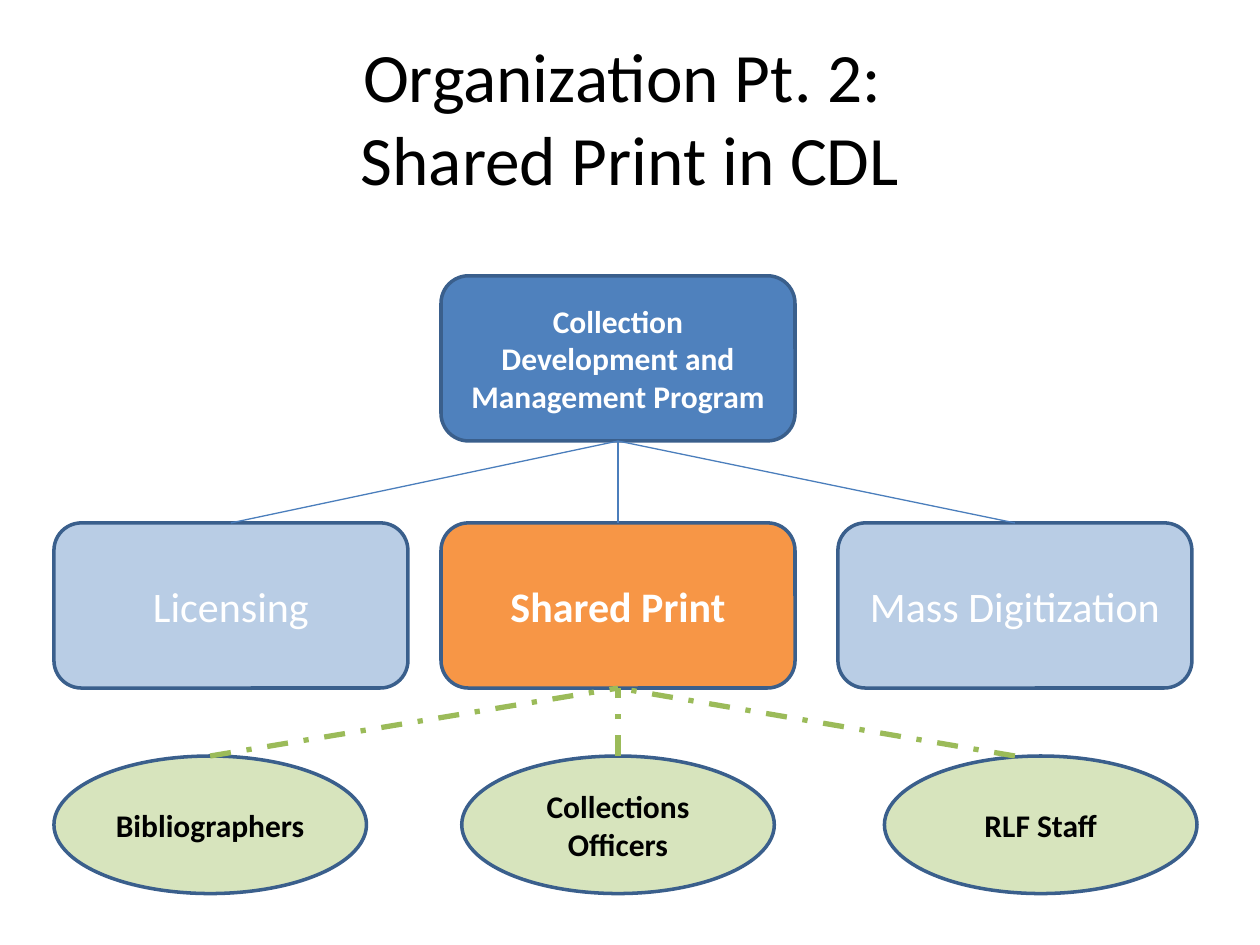
from lxml import etree
from pptx import Presentation
from pptx.dml.color import RGBColor
from pptx.enum import dml, shapes, text
from pptx.oxml.ns import qn
from pptx.util import Pt

BOX = shapes.MSO_SHAPE.ROUNDED_RECTANGLE
OVAL = shapes.MSO_SHAPE.OVAL
BOX_SIZE = (202.3, 94.4)
OVAL_SIZE = (178.6, 78.6)
PROGRAM_TOP, UNIT_TOP, PARTNER_TOP = 157.6, 298.8, 432


def color(hex_value):
    return RGBColor.from_string(hex_value)


class OrgChart:
    font = "Calibri"
    outline = "3A5F8C"

    def __init__(self, slide):
        self.slide = slide

    def add_run(self, paragraph, words, size, ink, bold=False):
        run = paragraph.add_run()
        run.text = words
        run.font.name = self.font
        run.font.size = Pt(size)
        run.font.bold = bold
        run.font.color.rgb = color(ink)

    def title(self, lines, left, top, width, height):
        heading = self.slide.shapes.title
        heading.left, heading.top = Pt(left), Pt(top)
        heading.width, heading.height = Pt(width), Pt(height)
        frame = heading.text_frame
        frame.vertical_anchor = text.MSO_ANCHOR.MIDDLE
        paragraph = frame.paragraphs[0]
        paragraph.alignment = text.PP_ALIGN.CENTER
        for number, line in enumerate(lines):
            if number:
                paragraph.add_line_break()
            self.add_run(paragraph, line, 39.6, "000000")

    def node(self, preset, words, left, top, size, fill, font_size, ink, bold=True):
        """Add an outlined shape with a centred label."""
        node = self.slide.shapes.add_shape(
            preset, Pt(left), Pt(top), *(Pt(side) for side in size))
        node.shadow.inherit = False
        node.fill.solid()
        node.fill.fore_color.rgb = color(fill)
        node.line.color.rgb = color(self.outline)
        node.line.width = Pt(2)
        frame = node.text_frame
        frame.word_wrap = True
        frame.vertical_anchor = text.MSO_ANCHOR.MIDDLE
        paragraph = frame.paragraphs[0]
        paragraph.alignment = text.PP_ALIGN.CENTER
        self.add_run(paragraph, words, font_size, ink, bold)

    def link(self, start, end, ink, width, dash=None):
        link = self.slide.shapes.add_connector(
            shapes.MSO_CONNECTOR.STRAIGHT, *(Pt(v) for v in (*start, *end)))
        link.line.color.rgb = color(ink)
        link.line.width = Pt(width)
        if dash:
            link.line.dash_style = dash
        etree.SubElement(link._element.spPr, qn("a:effectLst"))


def main():
    deck = Presentation()
    deck.slide_width, deck.slide_height = Pt(720), Pt(540)
    chart = OrgChart(deck.slides.add_slide(deck.slide_layouts[5]))
    chart.title(["Organization Pt. 2: ", "Shared Print in CDL"], 36, 21.6, 648, 90)

    box_width, box_height = BOX_SIZE
    left_edge, middle_left, right_left = 30.8, 252, 478.8
    center = middle_left + box_width / 2
    left_center = left_edge + box_width / 2
    right_center = right_left + box_width / 2

    chart.node(BOX, "Collection Development and Management Program",
               middle_left, PROGRAM_TOP, BOX_SIZE, "4F81BD", 18, "FFFFFF")
    units = [
        ("Shared Print", middle_left, "F79646", True),
        ("Licensing", left_edge, "B9CDE5", False),
        ("Mass Digitization", right_left, "B9CDE5", False),
    ]
    for name, left, fill, bold in units:
        chart.node(BOX, name, left, UNIT_TOP, BOX_SIZE, fill, 24, "FFFFFF", bold)
    for x in (right_center, center, left_center):
        chart.link((x, UNIT_TOP), (center, PROGRAM_TOP + box_height), "4B7EBC", 0.75)

    oval_width = OVAL_SIZE[0]
    partners = [
        ("Bibliographers", left_edge),
        ("Collections Officers", center - oval_width / 2),
        ("RLF Staff", 505.4),
    ]
    for name, left in partners:
        chart.node(OVAL, name, left, PARTNER_TOP, OVAL_SIZE, "D7E4BD", 18, "000000")
    for x in (left_edge + oval_width / 2, right_center, center):
        chart.link((x, PARTNER_TOP), (center, UNIT_TOP + box_height),
                   "9BBB59", 3, dml.MSO_LINE.DASH_DOT)

    deck.save("out.pptx")


if __name__ == "__main__":
    main()
